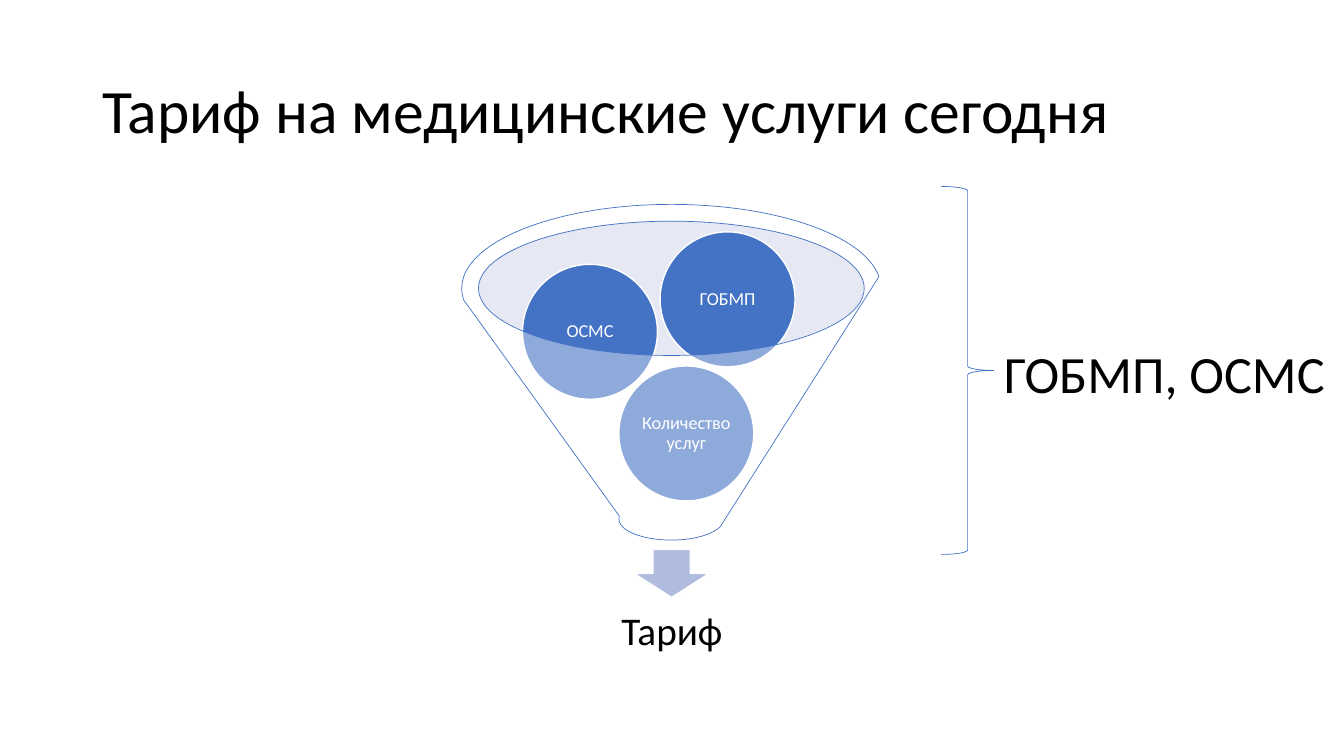
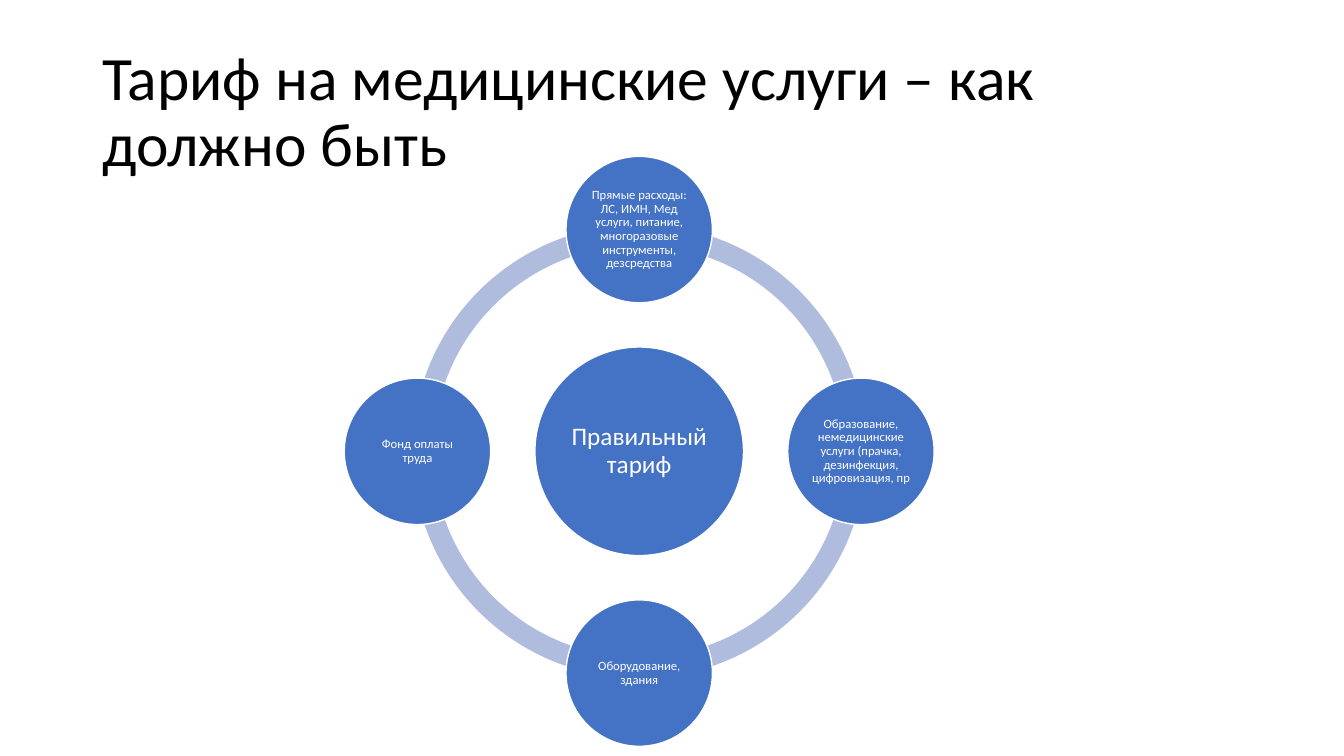
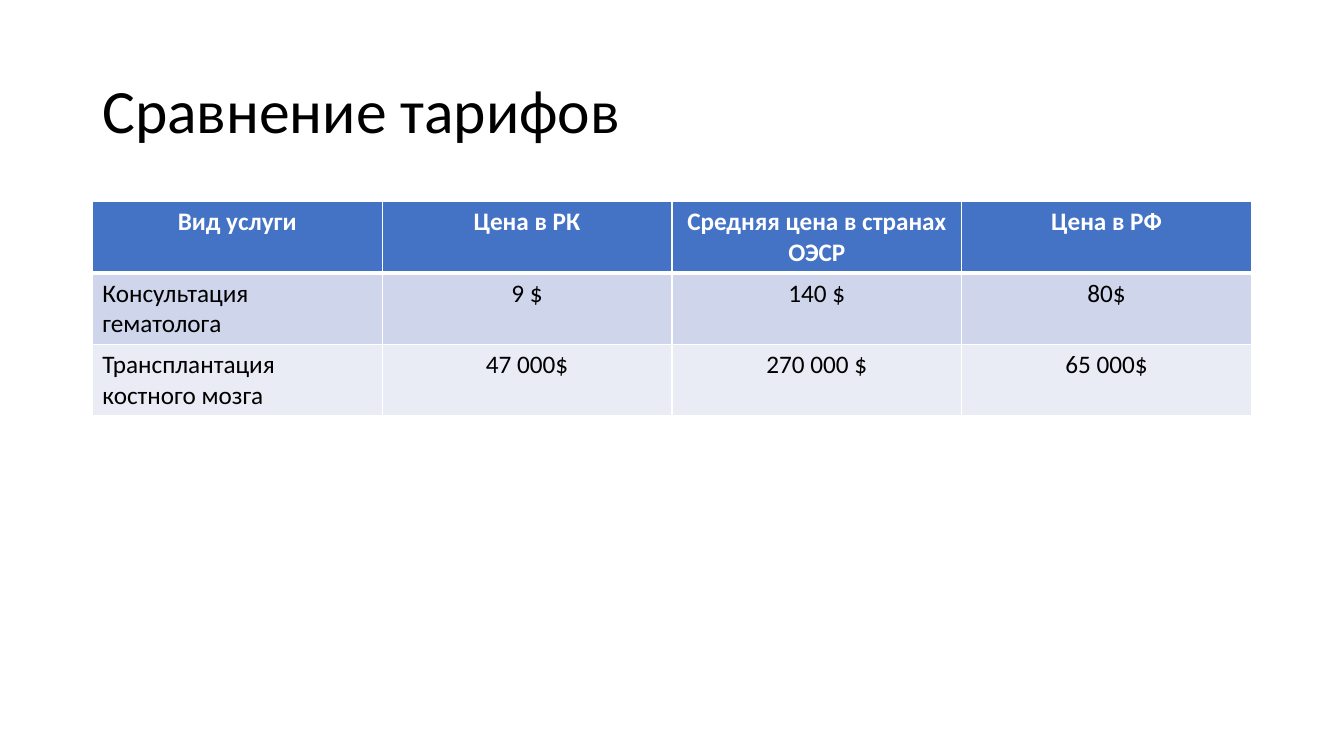
from dataclasses import dataclass
from math import cos, radians, sin

from lxml.etree import SubElement
from pptx import Presentation
from pptx.dml.color import RGBColor
from pptx.enum.shapes import MSO_SHAPE
from pptx.enum.text import MSO_ANCHOR, PP_ALIGN
from pptx.oxml.ns import qn
from pptx.shapes.autoshape import Shape
from pptx.slide import Slide
from pptx.table import _Cell as Cell
from pptx.text.text import TextFrame
from pptx.util import Pt

FONT = "Calibri"
COLORS = {
    "accent": "4472C4",
    "accent_pale": "B0BCDE",
    "mouth": "C1C9E4",
    "band_dark": "CFD5EA",
    "band_light": "E9EBF5",
    "white": "FFFFFF",
    "black": "000000",
}


@dataclass(frozen=True)
class Box:
    left: float
    top: float
    width: float
    height: float

    def lengths(self) -> tuple[Pt, Pt, Pt, Pt]:
        return Pt(self.left), Pt(self.top), Pt(self.width), Pt(self.height)


@dataclass(frozen=True)
class Circle:
    text: str
    center_x: float
    center_y: float
    diameter: float
    size: float
    inset: float

    def box(self) -> Box:
        radius = self.diameter / 2
        return Box(self.center_x - radius, self.center_y - radius,
                   self.diameter, self.diameter)


TITLE_BOX = Box(66, 28.75, 828, 104.4)

FUNNEL_DIAMETER = 96.4
FUNNEL_CIRCLES = [
    Circle("Количество услуг", 490.2, 309.6, FUNNEL_DIAMETER, 13, 1.4),
    Circle("ОСМС", 421.4, 237, FUNNEL_DIAMETER, 13, 1.4),
    Circle("ГОБМП", 519.7, 213.8, FUNNEL_DIAMETER, 13, 1.4),
]

RING_CENTER = (456.6, 322.4)
RING_DIAMETER = 324
RING_RADIUS = 158.4
QUARTER_TURN = 54
FULL_TURN = 4 * QUARTER_TURN
RING_TEXTS = [
    "Прямые расходы: ЛС, ИМН, Мед услуги, питание, многоразовые инструменты, дезсредства",
    "Образование, немедицинские услуги (прачка, дезинфекция, цифровизация, пр",
    "Оборудование, здания",
    "Фонд оплаты труда",
]

TABLE_BOX = Box(66, 144, 828, 153)
TABLE_ROWS = [
    ["Вид услуги", "Цена в РК", "Средняя цена в странах ОЭСР", "Цена в РФ"],
    ["Консультация гематолога", "9 $", "140 $", "80$"],
    ["Трансплантация костного мозга", "47 000$", "270 000 $", "65 000$"],
]
ROW_FILLS = ["accent", "band_dark", "band_light"]


def rgb(color: str) -> RGBColor:
    return RGBColor.from_string(COLORS[color])


def write_text(frame: TextFrame, text: str, *, size: float, color: str = "black",
               bold: bool = False, align: PP_ALIGN = PP_ALIGN.LEFT,
               spacing: float = 1) -> None:
    paragraph = frame.paragraphs[0]
    paragraph.alignment = align
    paragraph.line_spacing = spacing
    run = paragraph.add_run()
    run.text = text
    run.font.name = FONT
    run.font.size = Pt(size)
    run.font.bold = bold
    run.font.color.rgb = rgb(color)


def add_label(slide: Slide, box: Box, text: str, *, size: float,
              align: PP_ALIGN = PP_ALIGN.LEFT, spacing: float = 0.9) -> None:
    frame = slide.shapes.add_textbox(*box.lengths()).text_frame
    frame.word_wrap = True
    frame.vertical_anchor = MSO_ANCHOR.MIDDLE
    write_text(frame, text, size=size, align=align, spacing=spacing)


def add_figure(slide: Slide, kind: MSO_SHAPE, box: Box, *, fill: str | None = None,
               opacity: int = 100, line: str | None = None,
               line_width: float = 1) -> Shape:
    shape = slide.shapes.add_shape(kind, *box.lengths())
    shape.shadow.inherit = False
    if fill:
        shape.fill.solid()
        shape.fill.fore_color.rgb = rgb(fill)
        if opacity < 100:
            color = shape.fill._xPr.find(qn("a:solidFill")).find(qn("a:srgbClr"))
            SubElement(color, qn("a:alpha"), val=str(opacity * 1000))
    else:
        shape.fill.background()
    if line:
        shape.line.color.rgb = rgb(line)
        shape.line.width = Pt(line_width)
    else:
        shape.line.fill.background()
    return shape


def add_circle(slide: Slide, circle: Circle) -> None:
    shape = add_figure(slide, MSO_SHAPE.OVAL, circle.box(), fill="accent", line="white")
    frame = shape.text_frame
    frame.word_wrap = True
    frame.vertical_anchor = MSO_ANCHOR.MIDDLE
    frame.margin_left = frame.margin_right = Pt(circle.inset)
    frame.margin_top = frame.margin_bottom = Pt(circle.inset)
    write_text(frame, circle.text, size=circle.size, color="white",
               align=PP_ALIGN.CENTER, spacing=0.9)


def add_border(cell: Cell, side: str, width: float) -> None:
    properties = cell._tc.get_or_add_tcPr()
    line = SubElement(properties, qn(f"a:ln{side}"), w=str(Pt(width)))
    fill = SubElement(line, qn("a:solidFill"))
    SubElement(fill, qn("a:srgbClr"), val=COLORS["white"])


def add_titled_slide(presentation: Presentation, title: str) -> Slide:
    slide = presentation.slides.add_slide(presentation.slide_layouts[6])
    add_label(slide, TITLE_BOX, title, size=44)
    return slide


def build_funnel_slide(presentation: Presentation) -> None:
    slide = add_titled_slide(presentation, "Тариф на медицинские услуги сегодня")
    add_figure(slide, MSO_SHAPE.OVAL, Box(341.3, 157.7, 276.5, 95.8),
               fill="mouth", opacity=40)
    add_figure(slide, MSO_SHAPE.DOWN_ARROW, Box(453, 392.5, 53.5, 34.3),
               fill="accent_pale", line="white")
    add_label(slide, Box(351.4, 419.8, 257, 64), "Тариф", size=28,
              align=PP_ALIGN.CENTER)
    for circle in FUNNEL_CIRCLES:
        add_circle(slide, circle)
    add_figure(slide, MSO_SHAPE.FUNNEL, Box(329.8, 146, 299.5, 239.8),
               fill="white", opacity=40, line="accent", line_width=0.5)
    add_figure(slide, MSO_SHAPE.RIGHT_BRACE, Box(672.5, 133.2, 37.4, 262.8),
               line="accent", line_width=0.5)
    add_label(slide, Box(709.9, 247, 250, 46), "ГОБМП, ОСМС", size=37.4, spacing=0.8)


def build_ring_slide(presentation: Presentation) -> None:
    slide = add_titled_slide(presentation, "Тариф на медицинские услуги – как должно быть")
    center_x, center_y = RING_CENTER
    ring_box = Box(center_x - RING_DIAMETER / 2, center_y - RING_DIAMETER / 2,
                   RING_DIAMETER, RING_DIAMETER)
    for start in range(0, FULL_TURN, QUARTER_TURN):
        arc = add_figure(slide, MSO_SHAPE.BLOCK_ARC, ring_box, fill="accent_pale")
        arc.adjustments[0] = start
        arc.adjustments[1] = (start + QUARTER_TURN) % FULL_TURN
        arc.adjustments[2] = 0.046
    add_circle(slide, Circle("Правильный тариф", center_x, center_y, 149, 18, 2))
    for index, text in enumerate(RING_TEXTS):
        angle = radians(360 / len(RING_TEXTS) * index - 90)
        add_circle(slide, Circle(text, center_x + RING_RADIUS * cos(angle),
                                 center_y + RING_RADIUS * sin(angle), 104.6, 9, 0.8))


def build_table_slide(presentation: Presentation) -> None:
    slide = add_titled_slide(presentation, "Сравнение тарифов")
    table = slide.shapes.add_table(len(TABLE_ROWS), len(TABLE_ROWS[0]),
                                   *TABLE_BOX.lengths()).table
    table.horz_banding = False
    for row_index, texts in enumerate(TABLE_ROWS):
        header = row_index == 0
        widths = {"L": 1, "R": 1, "T": 3 if row_index == 1 else 1, "B": 3 if header else 1}
        for column_index, text in enumerate(texts):
            cell = table.cell(row_index, column_index)
            for side, width in widths.items():
                add_border(cell, side, width)
            cell.fill.solid()
            cell.fill.fore_color.rgb = rgb(ROW_FILLS[row_index])
            centered = header or column_index > 0
            write_text(cell.text_frame, text, size=18, bold=header,
                       color="white" if header else "black",
                       align=PP_ALIGN.CENTER if centered else PP_ALIGN.LEFT)


def main() -> None:
    presentation = Presentation()
    presentation.slide_width = Pt(960)
    presentation.slide_height = Pt(540)
    build_funnel_slide(presentation)
    build_ring_slide(presentation)
    build_table_slide(presentation)
    presentation.save("out.pptx")


if __name__ == "__main__":
    main()
